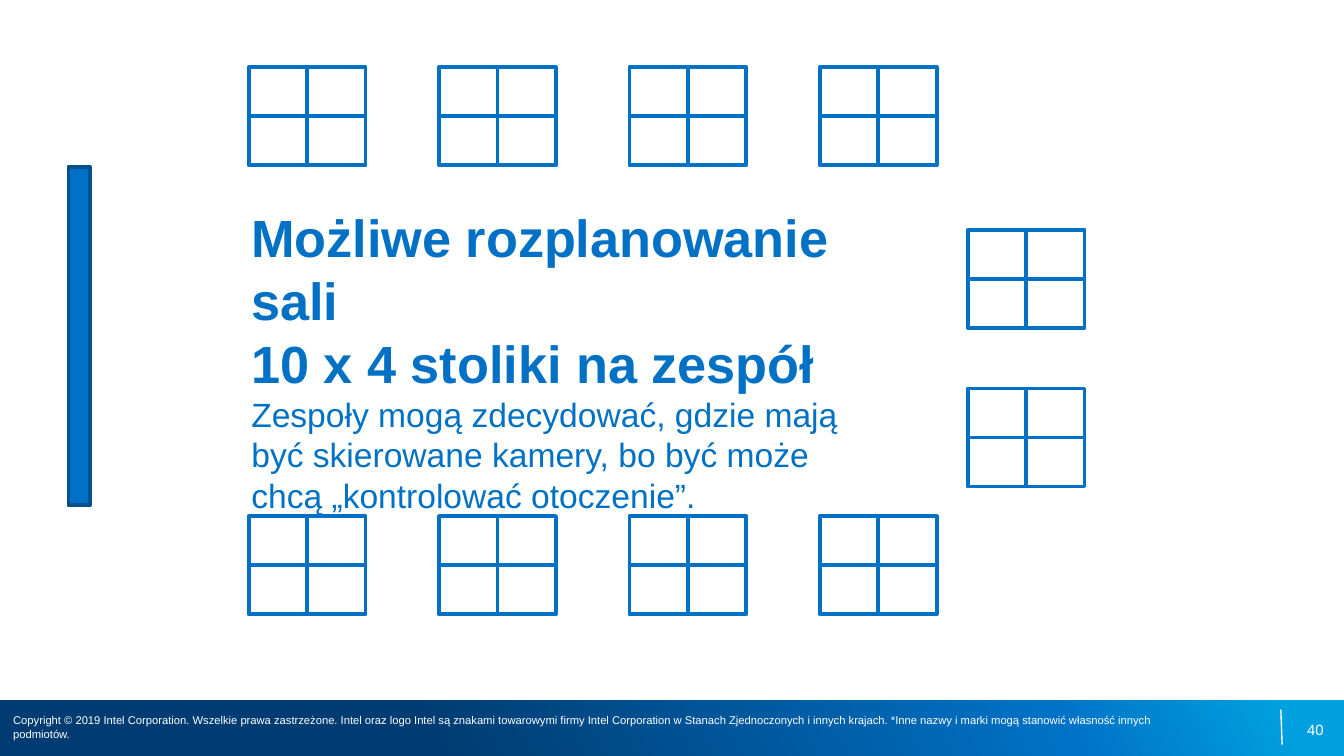
from lxml.etree import SubElement
from pptx import Presentation
from pptx.dml.color import RGBColor
from pptx.enum.shapes import MSO_CONNECTOR, MSO_SHAPE
from pptx.enum.text import MSO_ANCHOR, MSO_AUTO_SIZE, PP_ALIGN
from pptx.oxml.ns import qn
from pptx.util import Inches, Pt

WIDE = 10
HIGH = WIDE * 9 / 16
BLUE, DARK, WHITE = "0071C5", "00528F", "FFFFFF"

LINES = [
    ("Możliwe rozplanowanie sali", 28, True),
    ("10 x 4 stoliki na zespół", 28, True),
    ("Zespoły mogą zdecydować, gdzie mają być skierowane kamery, "
     "bo być może chcą „kontrolować otoczenie”.", 18, False),
]
LEGAL = (
    "Copyright © 2019 Intel Corporation. Wszelkie prawa zastrzeżone. "
    "Intel oraz logo Intel są znakami towarowymi firmy Intel Corporation "
    "w Stanach Zjednoczonych i innych krajach. "
    "*Inne nazwy i marki mogą stanowić własność innych podmiotów."
)
PAGE = "40"
STOPS = [(0, "003C71"), (32, "003C71"), (78, BLUE), (95, "009FDF"), (100, "009FDF")]
ANGLE = 331

DESK_W, DESK_H = 0.87 / 2, 0.73 / 2
LEFT, LAST, COLS = 1.85, 6.1, 4
STEP = (LAST - LEFT) / (COLS - 1)
ROWS = [0.5, 3.84]
SIDE, SIDE_TOPS = 7.2, [1.71, 2.89]
TABLES = [(LEFT + STEP * col, top) for top in ROWS for col in range(COLS)]
TABLES += [(SIDE, top) for top in SIDE_TOPS]


def color(text):
    return RGBColor.from_string(text)


def inch(*sizes):
    return [Inches(size) for size in sizes]


def rect(shapes, area, fill, line=None):
    shape = shapes.add_shape(MSO_SHAPE.RECTANGLE, *inch(*area))
    shape.shadow.inherit = False
    shape.fill.solid()
    shape.fill.fore_color.rgb = color(fill)
    if line:
        shape.line.color.rgb = color(line)
        shape.line.width = Pt(2)
    else:
        shape.line.fill.background()
    return shape


def blend(shape):
    shape.fill.gradient()
    grad = shape._element.spPr.find(qn("a:gradFill"))
    for part in list(grad):
        grad.remove(part)
    stops = SubElement(grad, qn("a:gsLst"))
    for share, tone in STOPS:
        stop = SubElement(stops, qn("a:gs"), pos=str(share * 1000))
        SubElement(stop, qn("a:srgbClr"), val=tone)
    SubElement(grad, qn("a:lin"), ang=str(ANGLE * 60000), scaled="0")


def setup(frame, pad_x, pad_y, anchor):
    frame.word_wrap = True
    frame.auto_size = MSO_AUTO_SIZE.NONE
    frame.margin_left = frame.margin_right = Inches(pad_x)
    frame.margin_top = frame.margin_bottom = Inches(pad_y)
    frame.vertical_anchor = anchor


def style(para, size, tone, bold=False, align=PP_ALIGN.LEFT):
    para.alignment = align
    for run in para.runs:
        run.font.name = "Arial"
        run.font.size = Pt(size)
        run.font.bold = bold
        run.font.color.rgb = color(tone)


def note(shapes, area, text, size, pad_x, pad_y, align):
    frame = shapes.add_textbox(*inch(*area)).text_frame
    setup(frame, pad_x, pad_y, MSO_ANCHOR.MIDDLE)
    frame.text = text
    style(frame.paragraphs[0], size, WHITE, align=align)
    return frame


def footer(shapes):
    blend(rect(shapes, (0, 5.21, WIDE, HIGH - 5.21), BLUE))
    rule = shapes.add_connector(MSO_CONNECTOR.STRAIGHT, *inch(9.53, 5.28, 9.54, 5.54))
    rule.line.color.rgb = color(WHITE)
    rule.line.width = Pt(0.75)
    SubElement(rule._element.spPr, qn("a:effectLst"))
    note(shapes, (7.52, 5.28, 2.33, 0.3), PAGE, 8, 0, 0, PP_ALIGN.RIGHT)
    legal = note(shapes, (0, 5.31, 8.86, 0.2), LEGAL, 6, 0.1, 0.05, PP_ALIGN.LEFT)
    legal.auto_size = MSO_AUTO_SIZE.SHAPE_TO_FIT_TEXT


def heading(title):
    title.left, title.top, title.width, title.height = inch(1.77, 1.43, 4.8, 1.89)
    frame = title.text_frame
    setup(frame, 0.1, 0.1, MSO_ANCHOR.TOP)
    frame.text = "\n".join(text for text, size, bold in LINES)
    for para, (text, size, bold) in zip(frame.paragraphs, LINES):
        para.line_spacing = 1.0
        style(para, size, BLUE, bold)


def table(shapes, left, top):
    group = shapes.add_group_shape()
    for row in range(2):
        for col in range(2):
            area = (left + col * DESK_W, top + row * DESK_H, DESK_W, DESK_H)
            rect(group.shapes, area, WHITE, BLUE)


def main():
    deck = Presentation()
    deck.slide_width, deck.slide_height = inch(WIDE, HIGH)
    slide = deck.slides.add_slide(deck.slide_layouts[5])
    footer(slide.shapes)
    heading(slide.shapes.title)
    rect(slide.shapes, (0.51, 1.24, 0.16, 2.52), BLUE, DARK)
    for left, top in TABLES:
        table(slide.shapes, left, top)
    deck.save("out.pptx")


if __name__ == "__main__":
    main()
